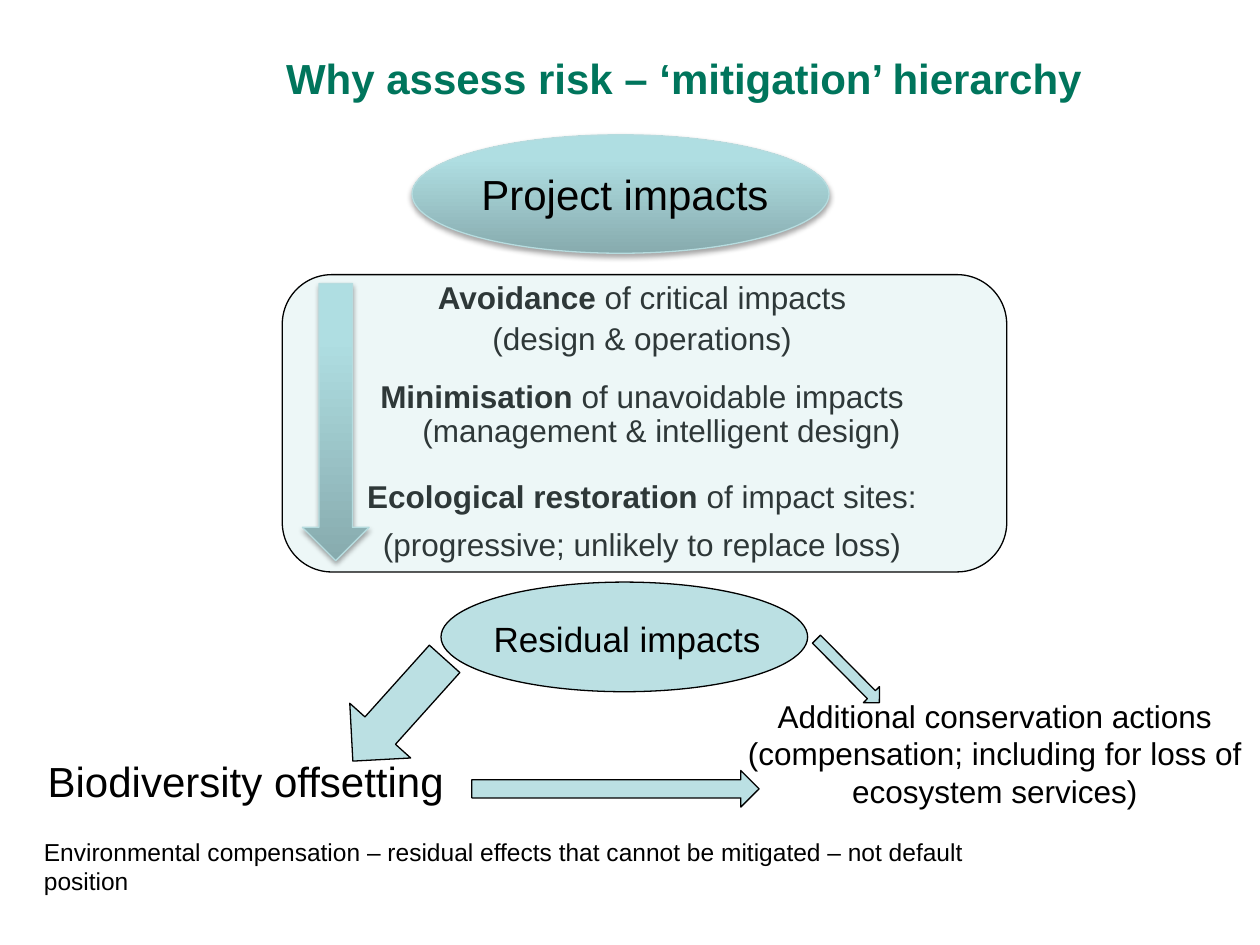
"""Build the mitigation hierarchy slide."""
from copy import deepcopy
from dataclasses import dataclass

from lxml.etree import SubElement
from pptx import Presentation
from pptx.dml.color import RGBColor
from pptx.enum.shapes import MSO_SHAPE
from pptx.enum.text import MSO_ANCHOR, PP_ALIGN
from pptx.oxml.ns import qn
from pptx.slide import Slide
from pptx.util import Inches, Pt

GREEN = RGBColor(0x00, 0x75, 0x5C)
BLACK = RGBColor(0x00, 0x00, 0x00)
AQUA = RGBColor(0xBB, 0xE0, 0xE3)
EDGE = RGBColor(0xB6, 0xDC, 0xDF)
SHADES = (
    (0, RGBColor(0x87, 0xAB, 0xAE)),
    (0.8, RGBColor(0xAF, 0xDE, 0xE2)),
    (1, RGBColor(0xAF, 0xE0, 0xE4)),
)
COLUMNS, ROWS = 100, 75
STEPS = (
    ("Avoidance", " of critical impacts", 0),
    ("", "(design & operations)", 4),
    ("Minimisation", " of unavoidable impacts (management & intelligent design)", 14),
    ("Ecological restoration", " of impact sites:", 18),
    ("", "(progressive; unlikely to replace loss)", 8),
)


def add_span(para, text, size=18, bold=False, color=BLACK, font="Arial"):
    """Append formatted text to a paragraph."""
    span = para.add_run()
    span.text = text
    span.font.name, span.font.size = font, Pt(size)
    span.font.bold, span.font.color.rgb = bold, color


@dataclass
class Page:
    """Draw styled elements on a slide, placed by grid columns and rows."""

    slide: Slide
    width: int
    height: int

    def place(self, left, top, across, down):
        """Turn grid columns and rows into lengths."""
        column, row = self.width / COLUMNS, self.height / ROWS
        return [round(n) for n in (left * column, top * row, across * column, down * row)]

    def title(self, area, text):
        """Move and format the title placeholder."""
        box = self.slide.shapes.title
        box.left, box.top, box.width, box.height = self.place(*area)
        box.text_frame.vertical_anchor = MSO_ANCHOR.MIDDLE
        para = box.text_frame.paragraphs[0]
        para.alignment = PP_ALIGN.LEFT
        add_span(para, text, size=24, bold=True, color=GREEN)

    def text(self, area, text, size, align=PP_ALIGN.LEFT, wrap=True):
        """Add a one-paragraph text box."""
        box = self.slide.shapes.add_textbox(*self.place(*area))
        box.text_frame.word_wrap = wrap
        para = box.text_frame.paragraphs[0]
        para.alignment = align
        add_span(para, text, size=size)

    def steps(self, area, steps):
        """Add the centred list of mitigation steps."""
        frame = self.slide.shapes.add_textbox(*self.place(*area)).text_frame
        frame.word_wrap = True
        frame.margin_left = frame.margin_right = Inches(0.11)
        frame.margin_top = frame.margin_bottom = Inches(0.06)
        for index, (lead, rest, gap) in enumerate(steps):
            para = frame.add_paragraph() if index else frame.paragraphs[0]
            properties = para._p.get_or_add_pPr()
            properties.set("marL", str(Inches(0.81)))
            properties.set("indent", str(Inches(-0.31)))
            para.alignment, para.line_spacing = PP_ALIGN.CENTER, 0.9
            para.space_before = Pt(gap)
            if lead:
                add_span(para, lead, bold=True)
            add_span(para, rest)

    def shape(self, kind, area, rotation=0, line=BLACK, alpha=None):
        """Add a flat outlined shape."""
        shape = self.slide.shapes.add_shape(kind, *self.place(*area))
        shape.rotation = rotation
        shape.shadow.inherit = False
        shape.fill.solid()
        shape.fill.fore_color.rgb = AQUA
        shape.line.color.rgb, shape.line.width = line, Pt(0.75)
        if alpha:
            color = shape._element.spPr.find(qn("a:solidFill"))[0]
            SubElement(color, qn("a:alpha"), val=str(alpha * 1000))
        return shape

    def raised(self, kind, area):
        """Add a shape with a gradient and a soft shadow."""
        shape = self.shape(kind, area, line=EDGE)
        shape.fill.gradient()
        shape.fill.gradient_angle = 90
        properties = shape._element.spPr
        stops = properties.find(qn("a:gradFill")).find(qn("a:gsLst"))
        stops.append(deepcopy(stops[-1]))
        for stop, (position, color) in zip(shape.fill.gradient_stops, SHADES):
            stop.position, stop.color.rgb = position, color
        shadow = SubElement(
            properties.find(qn("a:effectLst")), qn("a:outerShdw"),
            blurRad=str(Pt(3.1)), dist=str(Pt(1.8)), dir="5400000", rotWithShape="0",
        )
        color = SubElement(shadow, qn("a:srgbClr"), val=str(BLACK))
        SubElement(color, qn("a:alpha"), val="35000")


def main():
    """Build and save the deck."""
    deck = Presentation()
    deck.slide_width, deck.slide_height = Inches(10), Inches(7.5)
    page = Page(deck.slides.add_slide(deck.slide_layouts[5]), deck.slide_width, deck.slide_height)
    arrow = MSO_SHAPE.DOWN_ARROW

    page.title((21.7, 2.5, 74.8, 7.4), "Why assess risk – ‘mitigation’ hierarchy")
    page.raised(MSO_SHAPE.OVAL, (32.7, 10.7, 33.1, 9.4))
    page.text((36.6, 12.9, 26, 4.7), "Project impacts", 24, PP_ALIGN.CENTER)

    page.steps((22.4, 21.8, 52.1, 24.4), STEPS)
    page.shape(MSO_SHAPE.ROUNDED_RECTANGLE, (22.4, 21.8, 57.5, 23.6), alpha=25)
    page.raised(arrow, (24, 22.5, 5.3, 22))

    page.shape(arrow, (28.4, 50.9, 6.5, 10.9), rotation=41.9)
    page.shape(arrow, (66.4, 49.7, 1.8, 7.1), rotation=315.3)
    page.text((2.8, 59.5, 33.8, 5), "Biodiversity offsetting", 24, wrap=False)
    page.text(
        (57.9, 54.8, 42.1, 10.1),
        "Additional conservation actions (compensation; including for loss of ecosystem services)",
        18, PP_ALIGN.CENTER,
    )
    page.shape(MSO_SHAPE.OVAL, (35, 46.2, 29.1, 8.7))
    page.text((38.2, 48.5, 24.4, 4.4), "Residual impacts", 20)
    page.shape(arrow, (47.4, 51.2, 2.9, 22.8), rotation=270)
    page.text(
        (2.5, 65.9, 79.2, 5.7),
        "Environmental compensation – residual effects that cannot be mitigated – not default position",
        14,
    )
    deck.save("out.pptx")


if __name__ == "__main__":
    main()
